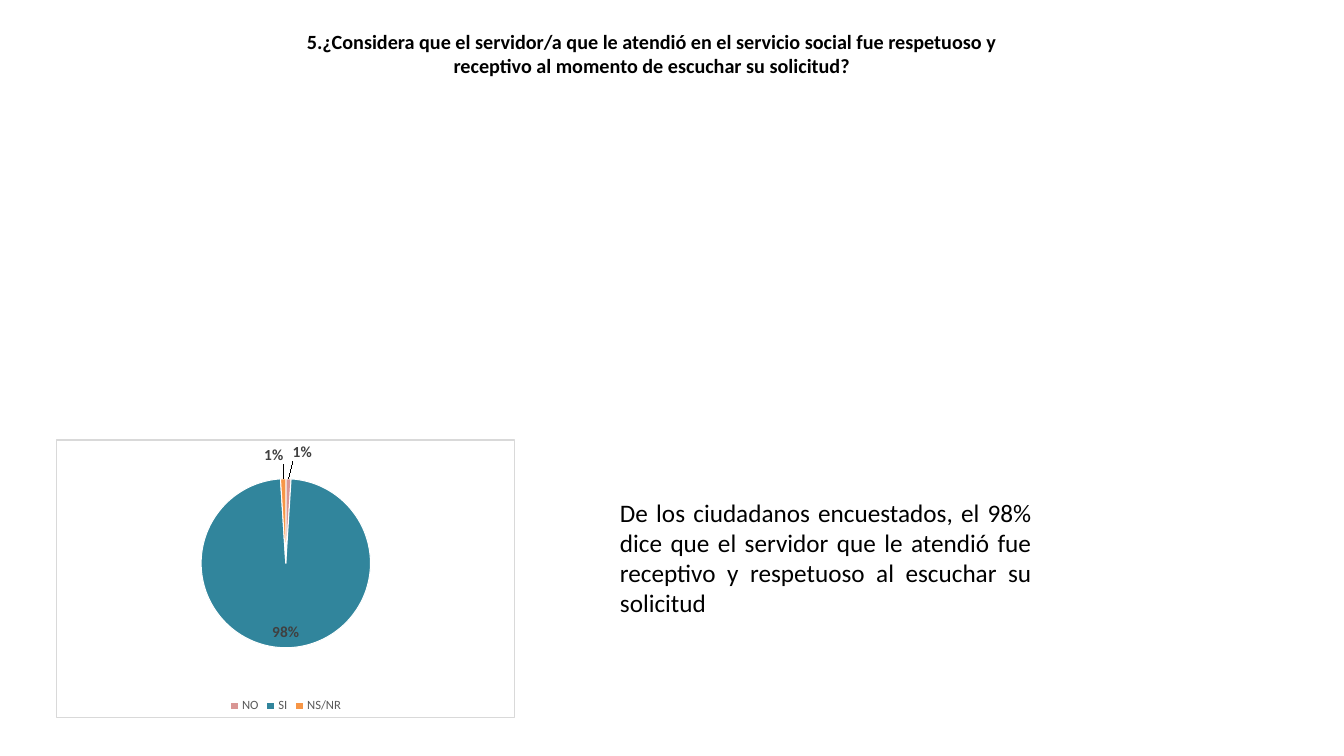
import dataclasses

import pptx
import pptx.chart.data
import pptx.dml.color
import pptx.enum.chart
import pptx.enum.text
import pptx.oxml
import pptx.oxml.ns
import pptx.util

PX = 9144
ALIGN = pptx.enum.text.PP_ALIGN
ANCHOR = pptx.enum.text.MSO_ANCHOR
LABEL = pptx.enum.chart.XL_LABEL_POSITION


@dataclasses.dataclass(frozen=True)
class Theme:
    font: str = "Calibri"
    text: str = "000000"
    label: str = "404040"
    legend: str = "595959"
    white: str = "FFFFFF"
    border: str = "D9D9D9"
    slices: tuple = ("D99694", "31859C", "F79646")
    title_pt: float = 14.4
    body_pt: float = 18
    chart_pt: float = 10
    label_pt: float = 11
    legend_pt: float = 9
    line_pt: float = 0.75


THEME = Theme()


def px(*lengths):
    return [pptx.util.Emu(n * PX) for n in lengths]


def rgb(value):
    return pptx.dml.color.RGBColor.from_string(value)


def set_font(font, size, color, bold=False):
    font.name = THEME.font
    font.size = pptx.util.Pt(size)
    font.bold = bold
    font.color.rgb = rgb(color)


def add_text(slide, box, text, size, align, anchor, bold=False):
    tf = slide.shapes.add_textbox(*px(*box)).text_frame
    tf.word_wrap = True
    tf.vertical_anchor = anchor
    p = tf.paragraphs[0]
    p.text = text
    p.alignment = align
    set_font(p.font, size, THEME.text, bold)


def layout_xml(modes, **values):
    tags = "".join(f'<c:{tag} val="{val}"/>' for tag, val in {**modes, **values}.items())
    return pptx.oxml.parse_xml(
        f'<c:layout {pptx.oxml.ns.nsdecls("c")}><c:manualLayout>{tags}'
        "</c:manualLayout></c:layout>")


def frame_chart(chart):
    frame = pptx.oxml.parse_xml(
        f'<c:spPr {pptx.oxml.ns.nsdecls("c", "a")}>'
        f'<a:solidFill><a:srgbClr val="{THEME.white}"/></a:solidFill>'
        f'<a:ln w="{pptx.util.Pt(THEME.line_pt)}"><a:solidFill>'
        f'<a:srgbClr val="{THEME.border}"/></a:solidFill></a:ln></c:spPr>')
    chart.element.find(pptx.oxml.ns.qn("c:chart")).addnext(frame)


def place_plot(chart, x, y, w, h):
    area = chart.element.xpath("c:chart/c:plotArea")[0]
    for old in area.xpath("c:layout"):
        area.remove(old)
    modes = {"layoutTarget": "inner", "xMode": "edge", "yMode": "edge"}
    area.insert(0, layout_xml(modes, x=x, y=y, w=w, h=h))


def label_outside(series, index, x, y):
    label = series.points[index].data_label
    set_font(label.font, THEME.label_pt, THEME.label, True)
    label.position = LABEL.OUTSIDE_END
    el = series.data_labels._element.xpath(f"c:dLbl[c:idx/@val='{index}']")[0]
    el.xpath("c:showVal")[0].set("val", "0")
    el.xpath("c:showPercent")[0].set("val", "1")
    el.xpath("c:idx")[0].addnext(layout_xml({}, x=x, y=y))


def add_pie(slide, box, categories, values):
    data = pptx.chart.data.CategoryChartData()
    data.categories = categories
    data.add_series("Series 1", values)
    kind = pptx.enum.chart.XL_CHART_TYPE.PIE
    chart = slide.shapes.add_chart(kind, *px(*box), data).chart
    set_font(chart.font, THEME.chart_pt, THEME.text)
    frame_chart(chart)
    chart.has_title = False
    chart.has_legend = True
    chart.legend.position = pptx.enum.chart.XL_LEGEND_POSITION.BOTTOM
    chart.legend.include_in_layout = False
    set_font(chart.legend.font, THEME.legend_pt, THEME.legend)
    chart.plots[0].vary_by_categories = True
    place_plot(chart, 0.1, 0.14, 0.8, 0.61)

    series = chart.plots[0].series[0]
    for i, color in enumerate(THEME.slices):
        fmt = series.points[i].format
        fmt.fill.solid()
        fmt.fill.fore_color.rgb = rgb(color)
        fmt.line.color.rgb = rgb(THEME.white)
        fmt.line.width = pptx.util.Pt(THEME.line_pt)
    labels = series.data_labels
    labels.show_value = False
    labels.show_percentage = True
    labels.position = LABEL.INSIDE_END
    set_font(labels.font, THEME.label_pt, THEME.label, True)
    label_outside(series, 0, 0.03, -0.04)
    label_outside(series, 2, -0.02, -0.03)


def main():
    prs = pptx.Presentation()
    prs.slide_width, prs.slide_height = px(1333, 750)
    slide = prs.slides.add_slide(prs.slide_layouts[6])
    add_text(slide, (260, 23, 773, 60),
             "5.¿Considera que el servidor/a que le atendió en el servicio social fue "
             "respetuoso y receptivo al momento de escuchar su solicitud?",
             THEME.title_pt, ALIGN.CENTER, ANCHOR.MIDDLE, bold=True)
    add_pie(slide, (56, 436, 455, 276), ("NO", "SI", "NS/NR"), (1, 98, 1))
    add_text(slide, (605, 488, 428, 192),
             "De los ciudadanos encuestados, el 98% dice que el servidor que le atendió "
             "fue receptivo y respetuoso al escuchar su solicitud",
             THEME.body_pt, ALIGN.JUSTIFY, ANCHOR.TOP)
    prs.save("out.pptx")


if __name__ == "__main__":
    main()
